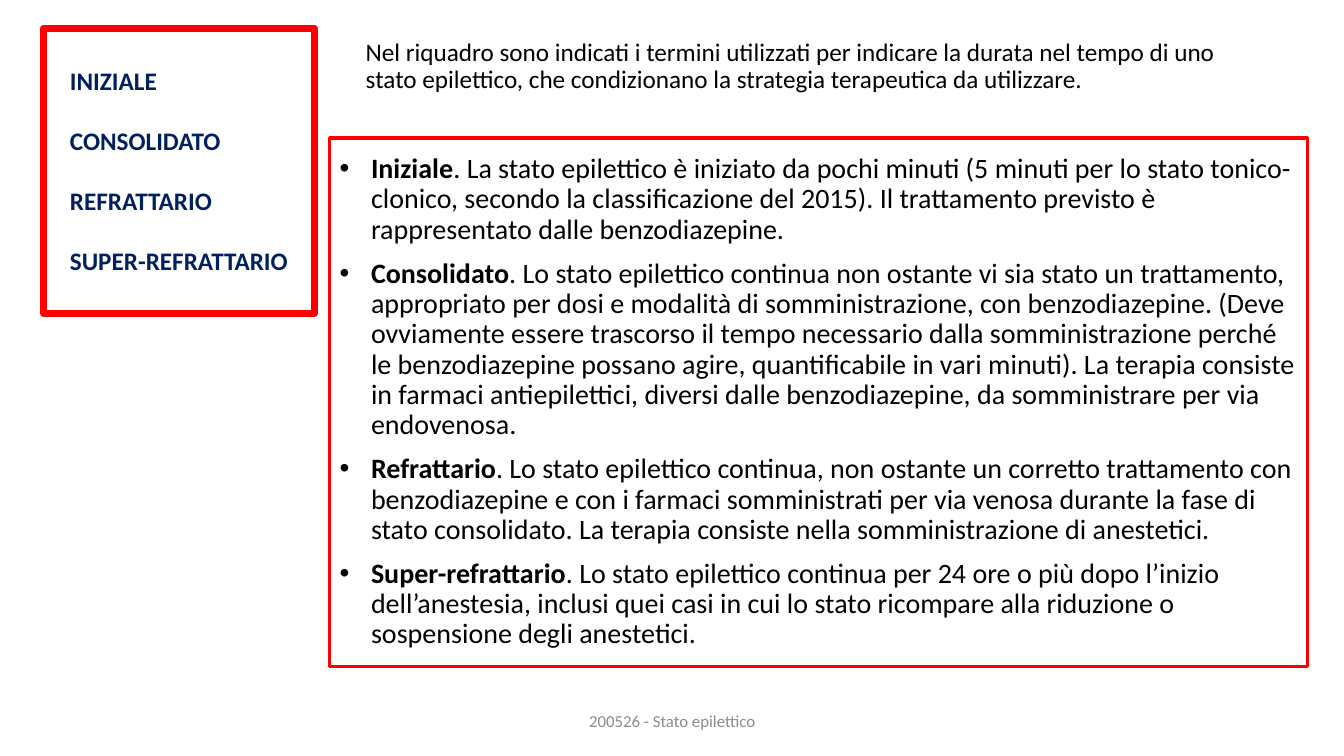
from dataclasses import dataclass

from lxml.etree import SubElement
from pptx import Presentation
from pptx.dml.color import RGBColor
from pptx.enum.shapes import MSO_SHAPE as Shape
from pptx.enum.text import MSO_ANCHOR as Anchor, PP_ALIGN as Align
from pptx.oxml.ns import qn
from pptx.util import Pt


@dataclass(frozen=True)
class Theme:
    font: str = "Calibri"
    black: RGBColor = RGBColor(0x00, 0x00, 0x00)
    navy: RGBColor = RGBColor(0x00, 0x20, 0x60)
    red: RGBColor = RGBColor(0xFF, 0x00, 0x00)
    grey: RGBColor = RGBColor(0x8C, 0x8C, 0x8C)
    body: int = 20
    label: int = 18
    footer: int = 12


@dataclass(frozen=True)
class Entry:
    text: str
    term: str = ""  # bold lead-in


@dataclass(frozen=True)
class Panel:
    left: float
    top: float
    width: float
    height: float
    entries: tuple[Entry, ...]
    size: int
    color: RGBColor
    border: float = 0
    bold: bool = False
    bullet_indent: float = 0
    line_spacing: float = 1
    space_before: float = 0
    inset: float = 7.2
    anchor: Anchor = Anchor.MIDDLE
    align: Align = Align.LEFT


THEME = Theme()

INTRO = Panel(
    254.16, 24.48, 640.08, 63.36,
    (Entry("Nel riquadro sono indicati i termini utilizzati per indicare la durata nel tempo "
           "di uno stato epilettico, che condizionano la strategia terapeutica da utilizzare."),),
    THEME.label, THEME.black, line_spacing=0.9, anchor=Anchor.TOP,
)

DEFINITIONS = Panel(
    235.44, 98.64, 698.4, 377.28,
    (
        Entry(". La stato epilettico è iniziato da pochi minuti (5 minuti per lo stato "
              "tonico-clonico, secondo la classificazione del 2015). Il trattamento previsto "
              "è rappresentato dalle benzodiazepine.", "Iniziale"),
        Entry(". Lo stato epilettico continua non ostante vi sia stato un trattamento, "
              "appropriato per dosi e modalità di somministrazione, con benzodiazepine. "
              "(Deve ovviamente essere trascorso il tempo necessario dalla somministrazione "
              "perché le benzodiazepine possano agire, quantificabile in vari minuti). "
              "La terapia consiste in farmaci antiepilettici, diversi dalle benzodiazepine, "
              "da somministrare per via endovenosa.", "Consolidato"),
        Entry(". Lo stato epilettico continua, non ostante un corretto trattamento con "
              "benzodiazepine e con i farmaci somministrati per via venosa durante la fase "
              "di stato consolidato. La terapia consiste nella somministrazione di "
              "anestetici.", "Refrattario"),
        Entry(". Lo stato epilettico continua per 24 ore o più dopo l’inizio "
              "dell’anestesia, inclusi quei casi in cui lo stato ricompare alla riduzione o "
              "sospensione degli anestetici.", "Super-refrattario"),
    ),
    THEME.body, THEME.black, border=2.25, bullet_indent=22.5, line_spacing=0.9, space_before=10,
)

FOOTER = Panel(
    318.24, 500.4, 324, 28.8, (Entry("200526 - Stato epilettico"),),
    THEME.footer, THEME.grey, align=Align.CENTER,
)

STAGES = Panel(
    30.96, 20.16, 193.68, 203.76,
    tuple(Entry(entry.term.upper()) for entry in DEFINITIONS.entries),
    THEME.label, THEME.navy, border=4.75, bold=True, space_before=21.3, inset=19,
)


def add_bullet(paragraph, indent: float) -> None:
    properties = paragraph._p.get_or_add_pPr()
    properties.set("marL", str(Pt(indent)))
    properties.set("indent", str(-Pt(indent)))
    SubElement(properties, qn("a:buFont")).set("typeface", "Arial")
    SubElement(properties, qn("a:buChar")).set("char", "•")


def write_entry(paragraph, entry: Entry, panel: Panel) -> None:
    paragraph.text = entry.term or entry.text
    if entry.term:
        paragraph.add_run().text = entry.text
    paragraph.alignment = panel.align
    paragraph.line_spacing = panel.line_spacing
    paragraph.space_before = Pt(panel.space_before)
    if panel.bullet_indent:
        add_bullet(paragraph, panel.bullet_indent)
    for position, run in enumerate(paragraph.runs):
        run.font.name = THEME.font
        run.font.size = Pt(panel.size)
        run.font.color.rgb = panel.color
        run.font.bold = panel.bold or bool(entry.term and position == 0)


def draw_panel(slide, panel: Panel) -> None:
    bounds = [Pt(v) for v in (panel.left, panel.top, panel.width, panel.height)]
    if panel.border:
        box = slide.shapes.add_shape(Shape.RECTANGLE, *bounds)
        box.shadow.inherit = False
        box.fill.background()
        box.line.color.rgb = THEME.red
        box.line.width = Pt(panel.border)
        SubElement(box.line._get_or_add_ln(), qn("a:round"))
    else:
        box = slide.shapes.add_textbox(*bounds)

    frame = box.text_frame
    frame.word_wrap = True
    frame.vertical_anchor = panel.anchor
    frame.margin_left = Pt(panel.inset)
    frame.margin_right = Pt(7.2)
    frame.text = "\n".join(entry.term or entry.text for entry in panel.entries)
    for paragraph, entry in zip(frame.paragraphs, panel.entries):
        write_entry(paragraph, entry, panel)


def main() -> None:
    deck = Presentation()
    deck.slide_width, deck.slide_height = Pt(960), Pt(540)
    slide = deck.slides.add_slide(deck.slide_layouts[6])

    # Back to front: introduction, definitions, footer, list of stages
    for panel in (INTRO, DEFINITIONS, FOOTER, STAGES):
        draw_panel(slide, panel)

    deck.save("out.pptx")


if __name__ == "__main__":
    main()
